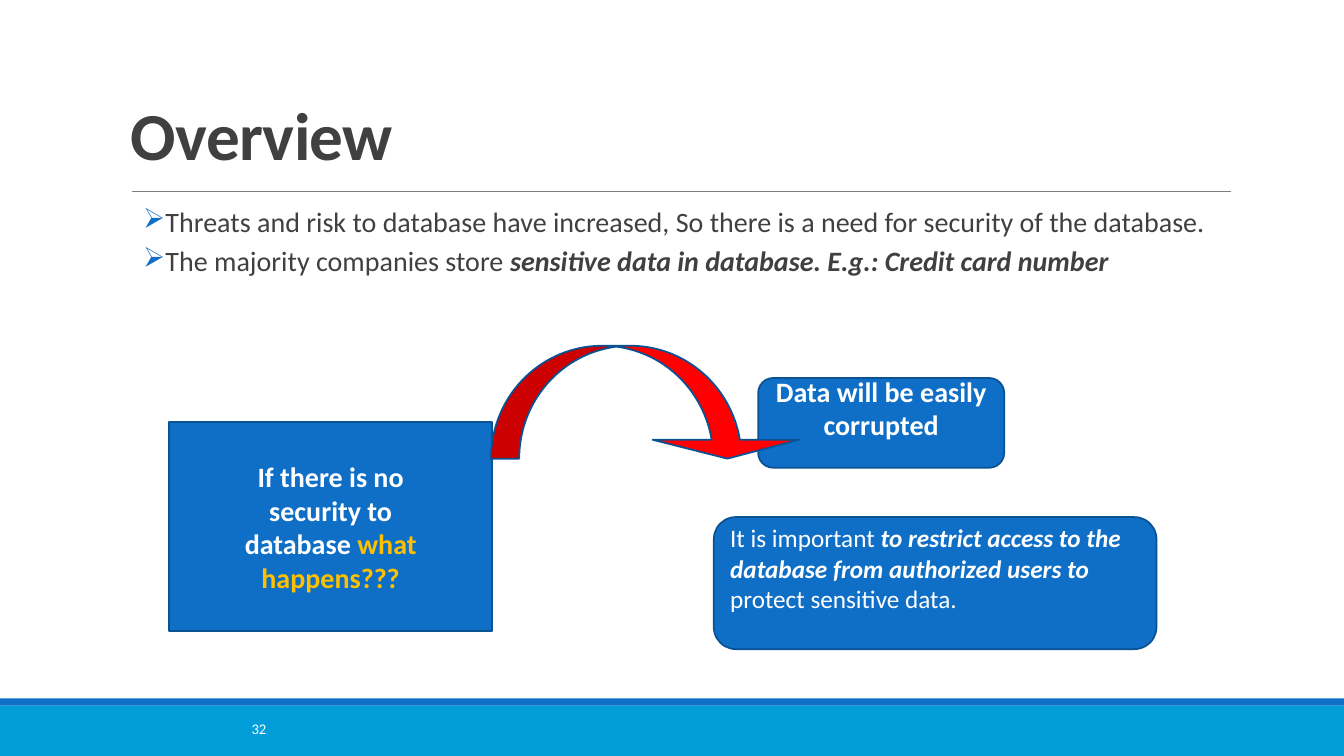
"""Build the database security overview slide."""
from lxml import etree
from pptx import Presentation
from pptx.dml.color import RGBColor
from pptx.enum.shapes import MSO_CONNECTOR, MSO_SHAPE
from pptx.enum.text import MSO_ANCHOR, PP_ALIGN
from pptx.oxml.ns import qn
from pptx.util import Inches, Pt

COLORS = {"blue": "0F6FC6", "edge": "0B5292", "cyan": "009DD9", "red": "FF0000",
          "rule": "808080", "ink": "404040", "white": "FFFFFF", "gold": "FFC000"}
BOLD = {"bold": True}
STRONG = {"bold": True, "italic": True}
GOLD = {"bold": True, "color": "gold"}


def add_panel(preset, box, fill, edge=None):
    panel = slide.shapes.add_shape(preset, *map(Inches, box))
    panel.shadow.inherit = False
    panel.fill.solid()
    panel.fill.fore_color.rgb = RGBColor.from_string(COLORS[fill])
    if edge:
        panel.line.color.rgb = RGBColor.from_string(COLORS[edge])
        panel.line.width = Pt(1.25)
    else:
        panel.line.fill.background()
    return panel


def write(holder, lines, size, color, align=PP_ALIGN.LEFT, anchor=MSO_ANCHOR.MIDDLE):
    frame = holder.text_frame
    frame.word_wrap = True
    frame.vertical_anchor = anchor
    for index, pieces in enumerate(lines):
        paragraph = frame.add_paragraph() if index else frame.paragraphs[0]
        paragraph.alignment = align
        for text, style in pieces:
            run = paragraph.add_run()
            run.text = text
            look = {"name": "Calibri", "size": Pt(size), **style}
            tint = look.pop("color", color)
            run.font.color.rgb = RGBColor.from_string(COLORS[tint])
            for key, value in look.items():
                setattr(run.font, key, value)
    return frame


deck = Presentation()
deck.slide_width, deck.slide_height = Inches(13.33), Inches(7.5)
slide = deck.slides.add_slide(deck.slide_layouts[6])

add_panel(MSO_SHAPE.RECTANGLE, (0, 7, 13.33, 0.5), "cyan")
add_panel(MSO_SHAPE.RECTANGLE, (0, 6.93, 13.33, 0.07), "blue")

title_rule = slide.shapes.add_connector(
    MSO_CONNECTOR.STRAIGHT, Inches(1.31), Inches(1.9), Inches(12.21), Inches(1.9))
title_rule.line.color.rgb = RGBColor.from_string(COLORS["rule"])
title_rule.line.width = Pt(0.5)
etree.SubElement(title_rule._element.spPr, qn("a:effectLst"))

title = slide.shapes.add_textbox(Inches(1.2), Inches(0.19), Inches(11), Inches(1.59))
heading = write(title, [[("Overview", BOLD)]], 48, "ink", anchor=MSO_ANCHOR.BOTTOM).paragraphs[0]
heading.line_spacing = 0.85
heading.runs[0].font._element.set("spc", "-50")

points = slide.shapes.add_textbox(Inches(1.2), Inches(2.02), Inches(11), Inches(4.4))
points_frame = write(points, [
    [("Threats and risk to database have increased, So there is a need for "
      "security of the database.", {})],
    [("The majority companies store ", {}),
     ("sensitive data in database. E.g.: Credit card number", STRONG)],
], 20, "ink", anchor=MSO_ANCHOR.TOP)
points_frame.margin_left = points_frame.margin_right = 0
for index, point in enumerate(points_frame.paragraphs):
    point.line_spacing = 0.9
    point.space_before = Pt(2 if index else 0)
    point.space_after = Pt(4)
    properties = point._p.get_or_add_pPr()
    properties.set("marL", str(Inches(0.42)))
    properties.set("indent", str(Inches(-0.2)))
    bullet_color = etree.SubElement(properties, qn("a:buClr"))
    etree.SubElement(bullet_color, qn("a:srgbClr"), val=COLORS["blue"])
    etree.SubElement(properties, qn("a:buChar"), char="➢")

page_number = slide.shapes.add_textbox(Inches(1.31), Inches(7.03), Inches(1.43), Inches(0.4))
write(page_number, [[("32", {})]], 10.5, "white", PP_ALIGN.RIGHT)

question = add_panel(MSO_SHAPE.RECTANGLE, (1.68, 4.19, 3.2, 2.07), "blue", "edge")
write(question, [
    [("If there is no", BOLD)],
    [("security to", BOLD)],
    [("database ", BOLD), ("what", GOLD)],
    [("happens???", GOLD)],
], 20, "white", PP_ALIGN.CENTER)

corruption = add_panel(MSO_SHAPE.ROUNDED_RECTANGLE, (7.52, 3.75, 2.44, 0.89), "blue", "edge")
corruption_frame = write(corruption, [[("Data will be easily corrupted", BOLD)]],
                         20, "white", PP_ALIGN.CENTER)

restriction = add_panel(MSO_SHAPE.ROUNDED_RECTANGLE, (7.08, 5.13, 4.39, 1.31), "blue", "edge")
restriction_frame = write(restriction, [
    [("It is important ", {}), ("to restrict access to the", STRONG)],
    [("database from authorized users to", STRONG)],
    [("protect sensitive data.", {})],
], 18, "white")
for frame in (corruption_frame, restriction_frame):
    frame.margin_bottom = Inches(0.35)

arrow = add_panel(MSO_SHAPE.CURVED_DOWN_ARROW, (4.87, 3.43, 3.07, 1.12), "red", "edge")
for index, ratio in enumerate((0.25, 1.296, 0.167)):
    arrow.adjustments[index] = ratio

deck.save("out.pptx")
